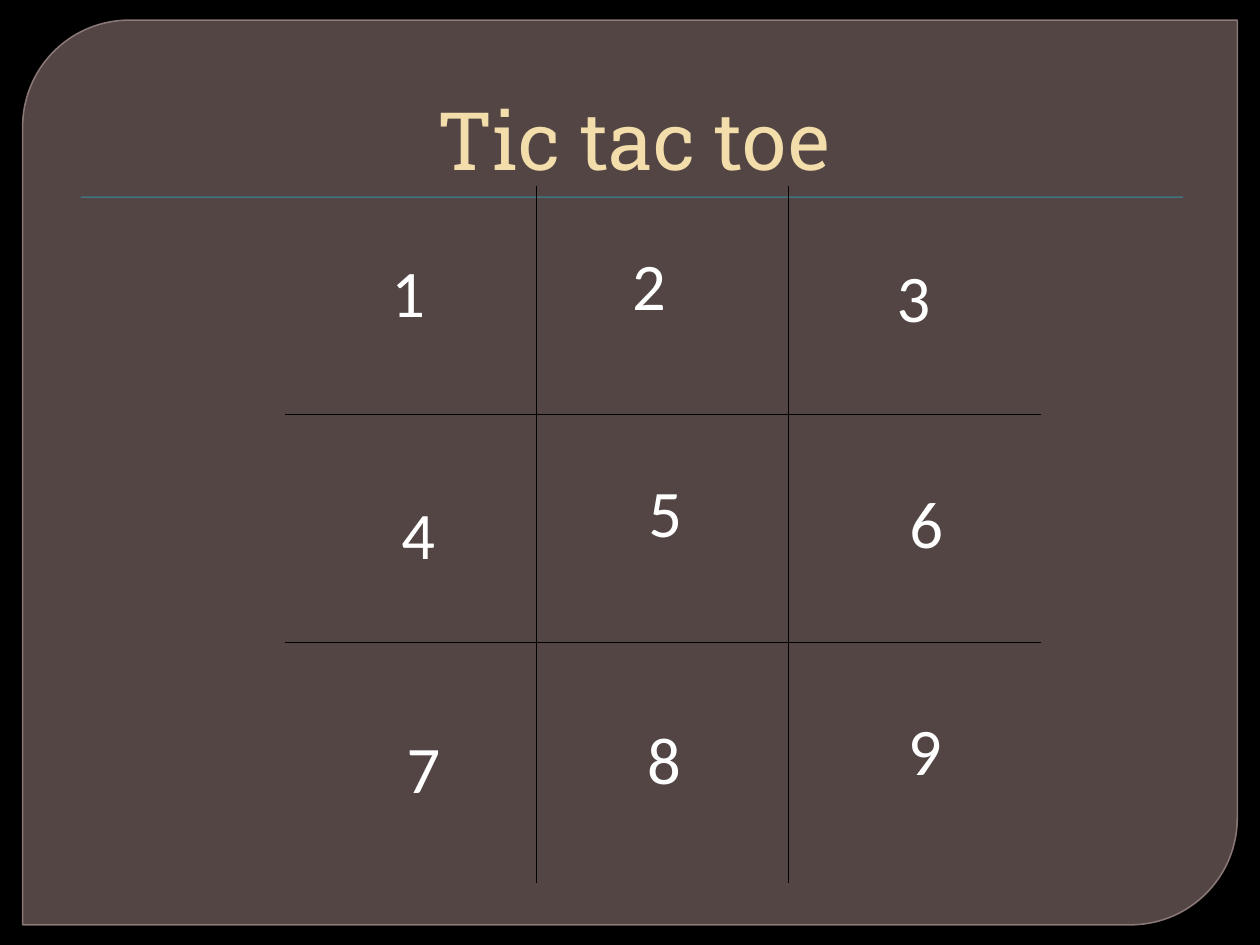
from lxml import etree
from pptx import Presentation
from pptx import util as u
from pptx.dml.color import RGBColor
from pptx.enum import shapes, text
from pptx.oxml.ns import qn

W, H = 10, 7.5
COLORS = {"back": "000000", "panel": "7F6B69", "edge": "968381", "rule": "3891A7",
          "title": "F2DDAB", "grid": "000000", "digit": "FFFFFF"}

# Board grid, in inches
LEFT, TOP, COL = 2.26, 1.48, 2
ROWS = [1.81, 1.81, 1.91]
# Hand-placed offset of each digit's box from its cell's corner
OFFSETS = [(0.22, 0.46), (0.13, 0.41), (0.23, 0.50),
           (0.30, 0.57), (0.26, 0.40), (0.33, 0.49),
           (0.34, 0.62), (0.25, 0.55), (0.32, 0.48)]


def rgb(name):
    return RGBColor.from_string(COLORS[name])


def inches(*values):
    return [u.Inches(v) for v in values]


def set_alpha(color_format, percent):
    """Make a solid fill (found by its parent element) translucent."""
    clr = color_format.find(qn("a:solidFill"))[0]
    etree.SubElement(clr, qn("a:alpha"), val=str(percent * 1000))


def add_block(s, kind, box, fill):
    sp = s.shapes.add_shape(kind, *inches(*box))
    sp.shadow.inherit = False
    sp.fill.solid()
    sp.fill.fore_color.rgb = rgb(fill)
    sp.line.fill.background()
    return sp


def add_panel(s):
    sp = add_block(s, shapes.MSO_SHAPE.ROUND_2_DIAG_RECTANGLE, (0.18, 0.16, 9.64, 7.18), "panel")
    sp.adjustments[0], sp.adjustments[1] = 0.118, 0
    sp.line.color.rgb = rgb("edge")
    sp.line.width = u.Pt(0.87)
    props = sp.fill._xPr
    set_alpha(props, 65)
    set_alpha(props.find(qn("a:ln")), 88)


def add_text(s, box, words, size, font, color, anchor=text.MSO_ANCHOR.TOP):
    tf = s.shapes.add_textbox(*inches(*box)).text_frame
    tf.word_wrap = True
    tf.vertical_anchor = anchor
    p = tf.paragraphs[0]
    p.text = words
    p.alignment = text.PP_ALIGN.CENTER
    p.font.size = u.Pt(size)
    p.font.name = font
    p.font.color.rgb = rgb(color)


def set_borders(cell, visible):
    """Draw the named sides and clear the others."""
    props = cell._tc.get_or_add_tcPr()
    for i, side in enumerate("LRTB"):
        ln = etree.Element(qn(f"a:ln{side}"), w=str(u.Pt(1)))
        if side in visible:
            fill = etree.SubElement(ln, qn("a:solidFill"))
            etree.SubElement(fill, qn("a:srgbClr"), val=COLORS["grid"])
        else:
            etree.SubElement(ln, qn("a:noFill"))
        props.insert(i, ln)


def add_board(s):
    n = len(ROWS)
    table = s.shapes.add_table(n, n, *inches(LEFT, TOP, n * COL, sum(ROWS))).table
    table.first_row = table.horz_banding = False
    for r, height in enumerate(ROWS):
        table.rows[r].height = u.Inches(height)
        for c in range(n):
            table.columns[c].width = u.Inches(COL)
            cell = table.cell(r, c)
            cell.fill.background()
            # Only the inner sides are drawn
            inner = {"L": c > 0, "R": c < n - 1, "T": r > 0, "B": r < n - 1}
            set_borders(cell, [side for side, on in inner.items() if on])


def add_digits(s):
    for i, (dx, dy) in enumerate(OFFSETS):
        r, c = divmod(i, 3)
        box = (LEFT + c * COL + dx, TOP + sum(ROWS[:r]) + dy, 1.52, 0.74)
        add_text(s, box, str(i + 1), 38, "Calibri", "digit")


def main():
    prs = Presentation()
    prs.slide_width, prs.slide_height = inches(W, H)
    s = prs.slides.add_slide(prs.slide_layouts[6])
    s.background.fill.solid()
    s.background.fill.fore_color.rgb = rgb("back")

    # Frame and title
    add_panel(s)
    add_block(s, shapes.MSO_SHAPE.RECTANGLE, (0.64, 1.56, 8.75, 0.01), "rule")
    add_text(s, (0.53, 0.28, 9, 1.25), "Tic tac toe", 46, "Roboto Slab", "title",
             text.MSO_ANCHOR.BOTTOM)

    # Game board
    add_board(s)
    add_digits(s)
    prs.save("out.pptx")


if __name__ == "__main__":
    main()
